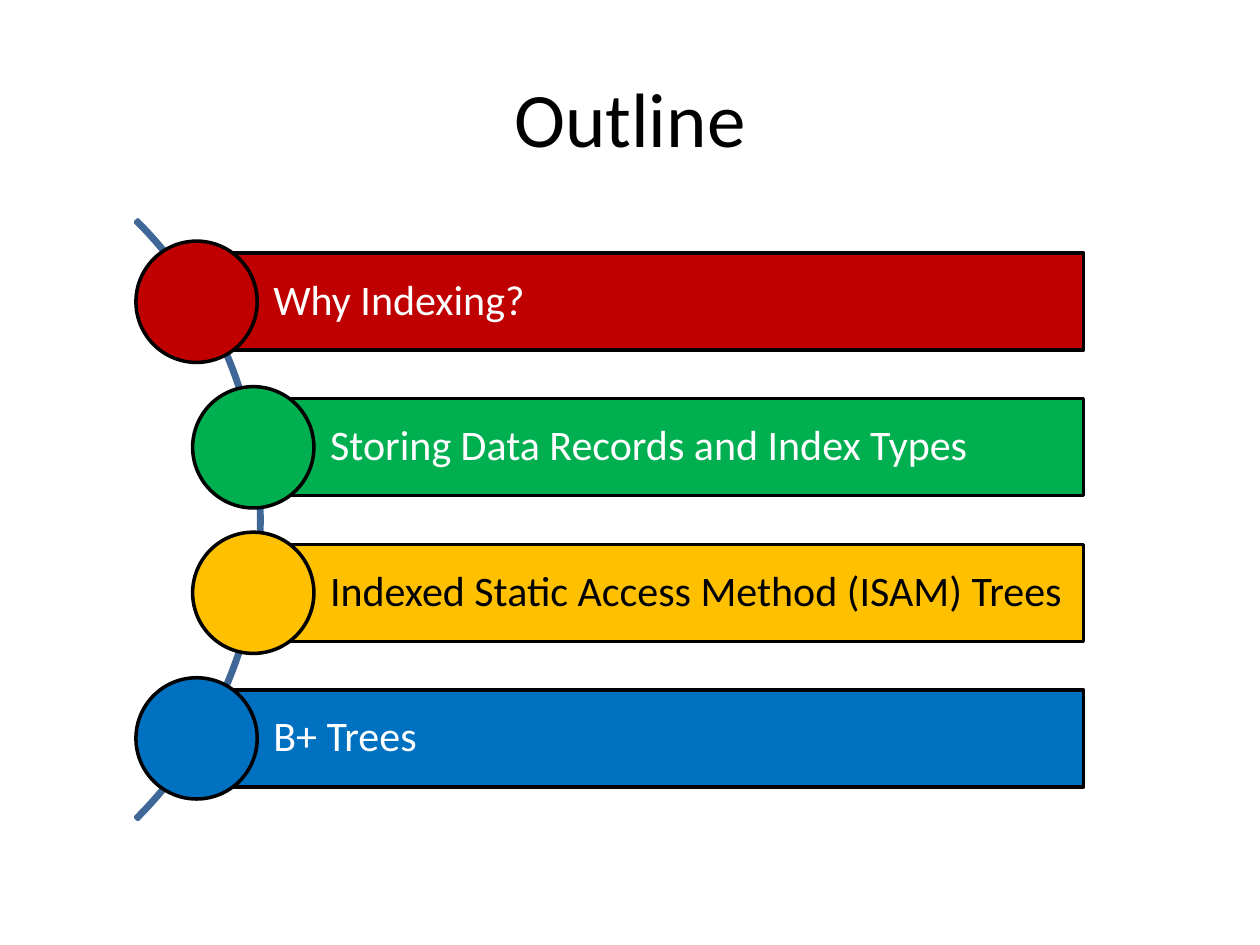
import pptx
import pptx.util
import pptx.dml.color
import pptx.enum.shapes
import pptx.enum.text

Inches = pptx.util.Inches
Shape = pptx.enum.shapes.MSO_SHAPE
Align = pptx.enum.text.PP_ALIGN

COLORS = {
    "black": "000000",
    "white": "FFFFFF",
    "arc": "3F6797",
    "red": "C00000",
    "green": "00B050",
    "amber": "FFC000",
    "blue": "0070C0",
}

TOPICS = [
    ("Why Indexing?", "red", "white", 1.56),
    ("Storing Data Records and Index Types", "green", "white", 2.01),
    ("Indexed Static Access Method (ISAM) Trees", "amber", "black", 2.01),
    ("B+ Trees", "blue", "white", 1.56),
]

BAR_TOP = 2.01
BAR_RIGHT = 8.6
BAR_HEIGHT = 0.77
BAR_PITCH = BAR_HEIGHT * 1.5
CIRCLE_SIZE = BAR_HEIGHT * 1.25


class OutlineSlide:
    font = "Calibri"
    line_width = pptx.util.Pt(2)

    def __init__(self, page):
        self.page = page

    def color(self, name):
        return pptx.dml.color.RGBColor.from_string(COLORS[name])

    def shape(self, kind, left, top, width, height, fill=None, line="black"):
        shape = self.page.shapes.add_shape(
            kind, Inches(left), Inches(top), Inches(width), Inches(height))
        shape.shadow.inherit = False
        if fill:
            shape.fill.solid()
            shape.fill.fore_color.rgb = self.color(fill)
        else:
            shape.fill.background()
        shape.line.color.rgb = self.color(line)
        shape.line.width = self.line_width
        return shape

    def label(self, box, text, size, color, align, insets, spacing=1.0):
        frame = box.text_frame
        frame.word_wrap = True
        frame.vertical_anchor = pptx.enum.text.MSO_ANCHOR.MIDDLE
        frame.margin_left, frame.margin_top, frame.margin_right, frame.margin_bottom = map(Inches, insets)
        para = frame.paragraphs[0]
        para.alignment = align
        para.line_spacing = spacing
        span = para.add_run()
        span.text = text
        span.font.name = self.font
        span.font.size = pptx.util.Pt(size)
        span.font.color.rgb = self.color(color)

    def title(self, text):
        box = self.page.shapes.add_textbox(Inches(0.5), Inches(0.3), Inches(9), Inches(1.25))
        self.label(box, text, 44, "black", Align.CENTER, (0.1, 0.05, 0.1, 0.05))

    def arc(self):
        arc = self.shape(Shape.BLOCK_ARC, -4.65, 0.76, 6.73, 6.73, line="arc")
        for index, value in enumerate((189, 27, 0.004)):
            arc.adjustments[index] = value

    def topic(self, text, fill, text_color, left, top):
        bar = self.shape(Shape.RECTANGLE, left, top, BAR_RIGHT - left, BAR_HEIGHT, fill)
        self.label(bar, text, 24, text_color, Align.LEFT, (0.61, 0.07, 0.07, 0.07), 0.9)
        self.shape(Shape.OVAL, left - CIRCLE_SIZE / 2, top + (BAR_HEIGHT - CIRCLE_SIZE) / 2,
                   CIRCLE_SIZE, CIRCLE_SIZE, fill)


def main():
    deck = pptx.Presentation()
    deck.slide_width = Inches(10)
    deck.slide_height = Inches(7.5)
    outline = OutlineSlide(deck.slides.add_slide(deck.slide_layouts[6]))
    outline.title("Outline")
    outline.arc()
    for row, (text, fill, text_color, left) in enumerate(TOPICS):
        outline.topic(text, fill, text_color, left, BAR_TOP + row * BAR_PITCH)
    deck.save("out.pptx")


if __name__ == "__main__":
    main()
